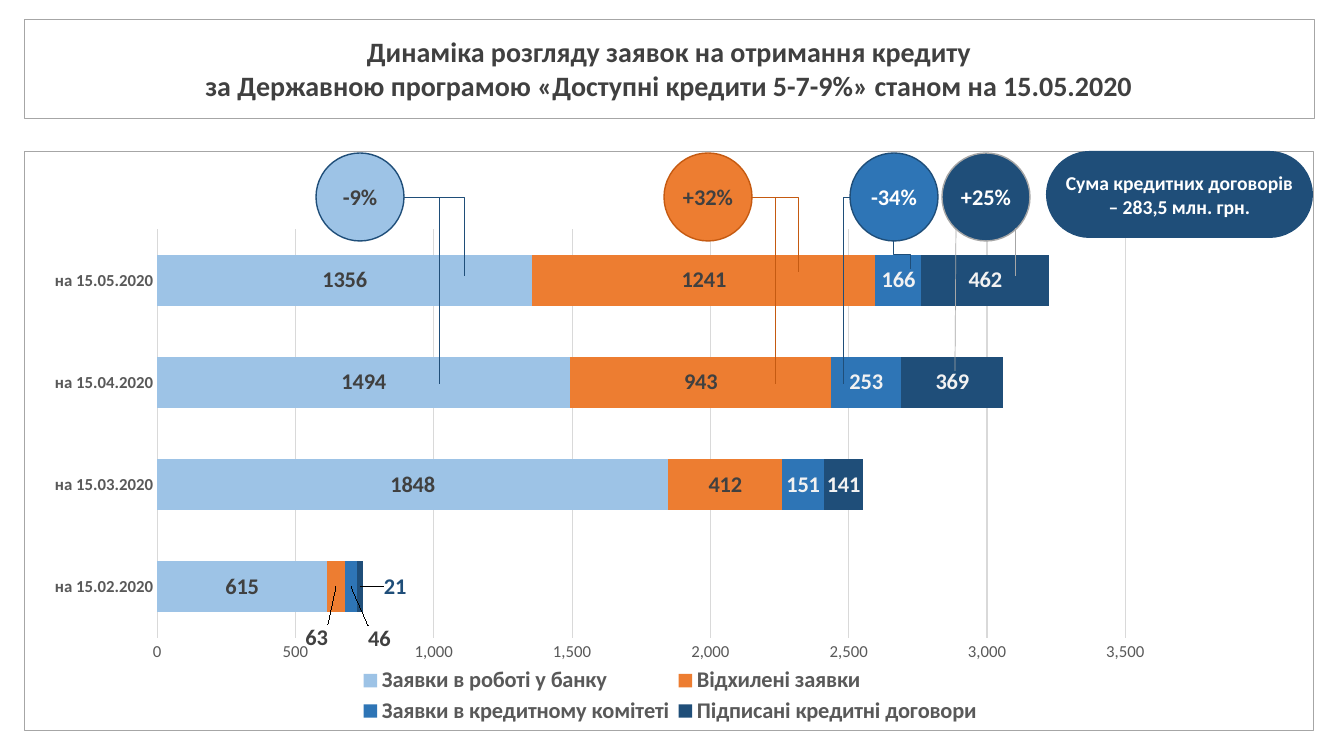
from lxml.etree import SubElement
from pptx import Presentation
from pptx.chart.data import CategoryChartData
from pptx.dml.color import RGBColor
from pptx.enum.chart import XL_CHART_TYPE, XL_LEGEND_POSITION, XL_TICK_MARK
from pptx.enum.shapes import MSO_CONNECTOR, MSO_SHAPE
from pptx.enum.text import MSO_ANCHOR, PP_ALIGN
from pptx.oxml import parse_xml
from pptx.oxml.ns import nsdecls, qn
from pptx.util import Pt

PX = 914400 / 100.8
FONT = "Calibri"
COLORS = {
    "sky": "9DC3E6", "orange": "ED7D31", "blue": "2E75B6", "navy": "1F4E79",
    "rust": "C55A11", "border": "A6A6A6", "grid": "D9D9D9", "axis": "595959",
    "dark": "404040", "pale": "F2F2F2", "white": "FFFFFF",
}


def set_font(font, size, color, bold=True):
    font.name = FONT
    font.size = Pt(size)
    font.bold = bold
    font.color.rgb = RGBColor.from_string(COLORS[color])


def make_layout(modes, **fractions):
    entries = modes + [(name, f"{value:.3f}") for name, value in fractions.items()]
    inner = "".join(f'<c:{name} val="{value}"/>' for name, value in entries)
    return parse_xml(
        f'<c:layout {nsdecls("c")}><c:manualLayout>{inner}</c:manualLayout></c:layout>'
    )


deck = Presentation()
deck.slide_width = round(1344 * PX)
deck.slide_height = round(756 * PX)
page = deck.slides.add_slide(deck.slide_layouts[6])

CHART_WIDTH, CHART_HEIGHT = 1290, 580
SERIES = [
    ("Заявки в роботі у банку", (615, 1848, 1494, 1356), "sky", "dark", None),
    ("Відхилені заявки", (63, 412, 943, 1241), "orange", "dark", (-19, 51, "dark")),
    ("Заявки в кредитному комітеті", (46, 151, 253, 166), "blue", "pale", (29, 53, "dark")),
    ("Підписані кредитні договори", (21, 141, 369, 462), "navy", "pale", (35, 0, "navy")),
]
data = CategoryChartData(number_format="0")
data.categories = [f"на 15.{month:02d}.2020" for month in range(2, 6)]
for name, values, *_ in SERIES:
    data.add_series(name, values)
chart = page.shapes.add_chart(
    XL_CHART_TYPE.BAR_STACKED,
    *[round(length * PX) for length in (24, 151, CHART_WIDTH, CHART_HEIGHT)], data
).chart
chart.has_title = False
chart.font.name = FONT
chart.font.size = Pt(10)
plot = chart.plots[0]
plot.gap_width = 100
plot.overlap = 100
plot.vary_by_categories = False

for series, (name, values, fill, label_color, moved) in zip(plot.series, SERIES):
    series.format.fill.solid()
    series.format.fill.fore_color.rgb = RGBColor.from_string(COLORS[fill])
    labels = series.data_labels
    labels.show_value = True
    labels.number_format = "0"
    labels.number_format_is_linked = False
    set_font(labels.font, 16, label_color)
    if moved:
        shift_x, shift_y, moved_color = moved
        set_font(series.points[0].data_label.font, 16, moved_color)
        first_label = labels._element.find(qn("c:dLbl"))
        first_label.find(qn("c:idx")).addnext(
            make_layout([], x=shift_x / CHART_WIDTH, y=shift_y / CHART_HEIGHT)
        )

for axis, bold in ((chart.category_axis, True), (chart.value_axis, False)):
    axis.major_tick_mark = XL_TICK_MARK.NONE
    axis.minor_tick_mark = XL_TICK_MARK.NONE
    set_font(axis.tick_labels.font, 12, "axis", bold)
chart.category_axis.has_major_gridlines = False
value_axis = chart.value_axis
value_axis.minimum_scale = 0
value_axis.maximum_scale = 3500
value_axis.major_unit = 500
value_axis.tick_labels.number_format = "#,##0"
value_axis.tick_labels.number_format_is_linked = False
value_axis.format.line.fill.background()
value_axis.has_major_gridlines = True
for line in (chart.category_axis.format.line, value_axis.major_gridlines.format.line):
    line.color.rgb = RGBColor.from_string(COLORS["grid"])
    line.width = Pt(0.75)

chart.has_legend = True
legend = chart.legend
legend.position = XL_LEGEND_POSITION.BOTTOM
legend.include_in_layout = False
set_font(legend.font, 16, "axis")
edges = [("xMode", "edge"), ("yMode", "edge")]
for old in legend._element.findall(qn("c:layout")):
    legend._element.remove(old)
legend._element.find(qn("c:legendPos")).addnext(
    make_layout(edges, x=0.256, y=0.885, w=0.49, h=0.11)
)
plot_area = chart._chartSpace.chart.plotArea
for old in plot_area.findall(qn("c:layout")):
    plot_area.remove(old)
plot_area.insert(
    0, make_layout([("layoutTarget", "inner")] + edges, x=0.103, y=0.135, w=0.751, h=0.705)
)
chart._chartSpace.chart.addnext(parse_xml(
    f'<c:spPr {nsdecls("c", "a")}><a:noFill/><a:ln w="{Pt(0.5)}"><a:solidFill>'
    f'<a:srgbClr val="{COLORS["border"]}"/></a:solidFill></a:ln></c:spPr>'
))

TITLE = (
    "Динаміка розгляду заявок на отримання кредиту\n"
    "за Державною програмою «Доступні кредити 5-7-9%» станом на 15.05.2020"
)
TOTAL = "Сума кредитних договорів – 283,5 млн. грн."
OVAL = MSO_SHAPE.OVAL
BOXES = [
    (MSO_SHAPE.RECTANGLE, 24, 19, 1290, 99, TITLE, 20, "dark", None, "border", 0.5),
    (OVAL, 942, 153, 88, 88, "+25%", 16, "white", "navy", "border", 1),
    (OVAL, 664, 153, 88, 88, "+32%", 16, "dark", "orange", "rust", 1),
    (MSO_SHAPE.ROUNDED_RECTANGLE, 1046, 151, 267, 87, TOTAL, 14, "white", "navy", None, 0),
    (OVAL, 850, 153, 88, 88, "-34%", 16, "white", "blue", "navy", 1),
    (OVAL, 316, 153, 88, 88, "-9%", 16, "dark", "sky", "navy", 1),
]
for kind, left, top, width, height, text, size, color, fill, outline, weight in BOXES:
    box = page.shapes.add_shape(
        kind, *[round(length * PX) for length in (left, top, width, height)]
    )
    box.shadow.inherit = False
    if kind == MSO_SHAPE.ROUNDED_RECTANGLE:
        box.adjustments[0] = 0.5
    if fill:
        box.fill.solid()
        box.fill.fore_color.rgb = RGBColor.from_string(COLORS[fill])
    else:
        box.fill.background()
    if outline:
        box.line.color.rgb = RGBColor.from_string(COLORS[outline])
        box.line.width = Pt(weight)
    else:
        box.line.fill.background()
    frame = box.text_frame
    frame.word_wrap = True
    frame.vertical_anchor = MSO_ANCHOR.MIDDLE
    if fill:
        frame.margin_left = frame.margin_right = frame.margin_top = frame.margin_bottom = 0
    frame.text = text
    for para in frame.paragraphs:
        para.alignment = PP_ALIGN.CENTER
        for span in para.runs:
            set_font(span.font, size, color)

CALLOUTS = [
    ("bentConnector2", 404, 197, 464, 276, "navy", 0),
    ("bentConnector2", 404, 197, 439, 384, "navy", 0),
    ("bentConnector2", 751, 197, 798, 272, "rust", 0),
    ("bentConnector2", 751, 197, 775, 384, "rust", 0),
    ("bentConnector2", 850, 197, 843, 384, "navy", 0),
    ("bentConnector3", 916, 246, 887, 263, "navy", 270),
    ("line", 956, 228, 955, 371, "border", 0),
    ("line", 1015, 228, 1015, 276, "border", 0),
]
for preset, start_x, start_y, end_x, end_y, color, turn in CALLOUTS:
    kind = MSO_CONNECTOR.STRAIGHT if preset == "line" else MSO_CONNECTOR.ELBOW
    callout = page.shapes.add_connector(
        kind, *[round(length * PX) for length in (start_x, start_y, end_x, end_y)]
    )
    callout.line.color.rgb = RGBColor.from_string(COLORS[color])
    callout.line.width = Pt(0.5)
    properties = callout._element.spPr
    properties.find(qn("a:prstGeom")).set("prst", preset)
    if turn:
        properties.find(qn("a:xfrm")).set("rot", str(turn * 60000))
    SubElement(properties, qn("a:effectLst"))

deck.save("out.pptx")
